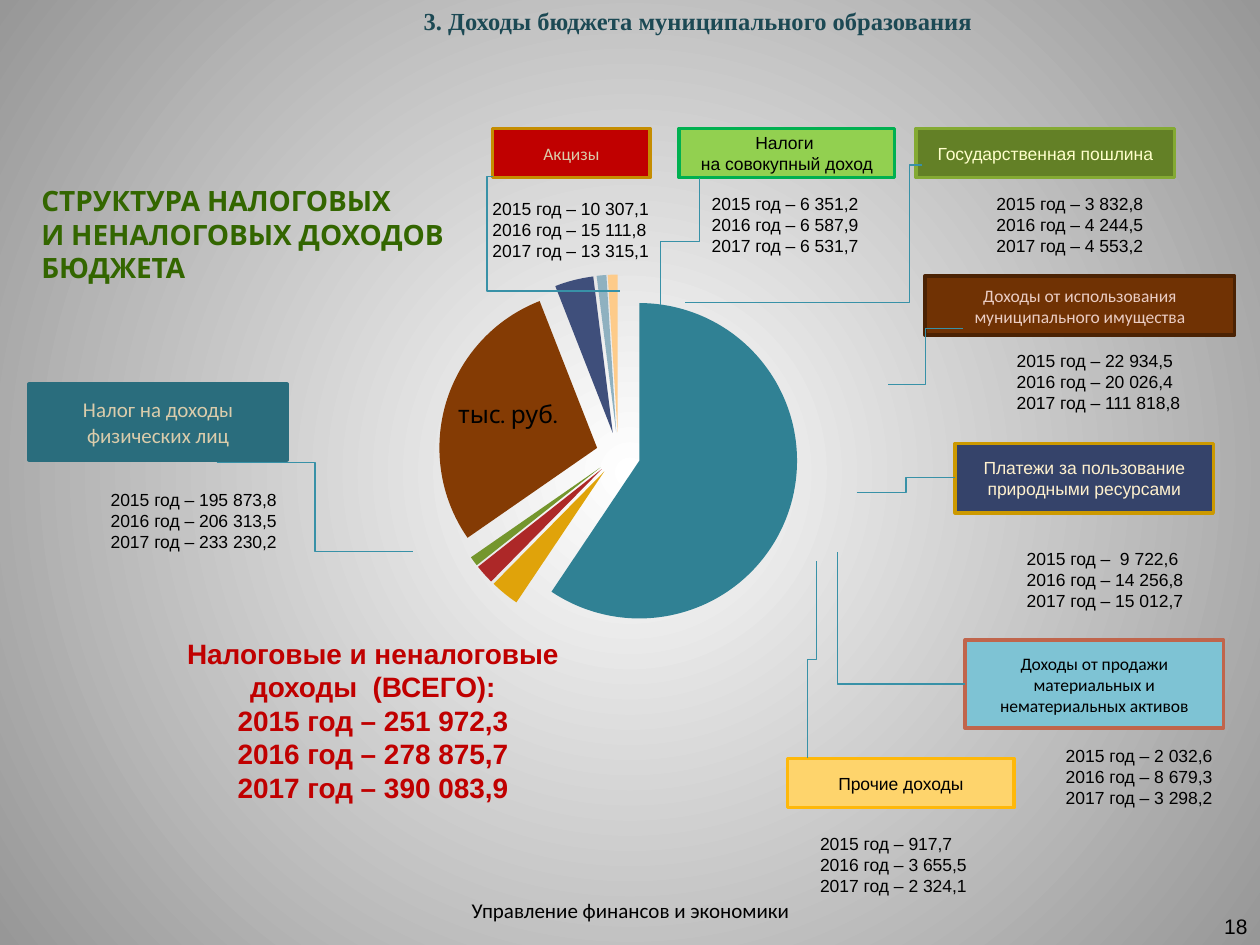
from lxml.etree import SubElement
from pptx import Presentation
from pptx.chart.data import CategoryChartData
from pptx.dml.color import RGBColor
from pptx.enum.chart import XL_CHART_TYPE
from pptx.enum.shapes import MSO_CONNECTOR, MSO_SHAPE
from pptx.enum.text import MSO_ANCHOR, MSO_AUTO_SIZE, PP_ALIGN
from pptx.oxml import parse_xml
from pptx.oxml.ns import nsdecls, qn
from pptx.util import Inches, Pt

THEME = {
    "center": "FFFFFF", "edge": "979797", "text": "000000", "title": "1C4954",
    "heading": "336600", "total": "C00000", "connector": "3891A7",
    "slices": ["308194", "E0A30A", "AD2828", "74962D", "843B04", "3F4F7B", "8FB1C0", "FDCB8A"],
    "small": 10, "normal": 12, "medium": 14, "large": 16,
}


def write(shape, text, size=THEME["small"], font="Arial", color=THEME["text"], bold=False,
          align=PP_ALIGN.LEFT, anchor=MSO_ANCHOR.TOP, wrap=True):
    """Fill a shape with text, one paragraph per line."""
    frame = shape.text_frame
    frame.word_wrap = wrap
    frame.auto_size = MSO_AUTO_SIZE.NONE
    frame.vertical_anchor = anchor
    frame.text = text
    for paragraph in frame.paragraphs:
        paragraph.alignment = align
        for run in paragraph.runs:
            run.font.size = Pt(size)
            run.font.name = font
            run.font.bold = bold
            run.font.color.rgb = RGBColor.from_string(color)


def inches(*lengths):
    return [Inches(length) for length in lengths]


presentation = Presentation()
presentation.slide_width, presentation.slide_height = inches(10, 7.5)
slide = presentation.slides.add_slide(presentation.slide_layouts[5])
shapes = slide.shapes

# Background: radial gradient from the middle
fill = slide.background.fill
fill.gradient()
for stop, position, color in zip(fill.gradient_stops, (0, 1), (THEME["center"], THEME["edge"])):
    stop.position = position
    stop.color.rgb = RGBColor.from_string(color)
linear = next(slide.background._cSld.iter(qn("a:lin")))
linear.getparent().replace(linear, parse_xml(
    f'<a:path {nsdecls("a")} path="circle">'
    '<a:fillToRect l="50000" t="50000" r="50000" b="50000"/></a:path>'))

# Title
title = shapes.title
title.left, title.top, title.width, title.height = inches(1.87, 0, 7.34, 0.34)
write(title, "3. Доходы бюджета муниципального образования", size=THEME["medium"],
      font="Times New Roman", color=THEME["title"], bold=True, align=PP_ALIGN.CENTER)

# Exploded pie of the income structure
chart_data = CategoryChartData()
chart_data.categories = [str(number) for number in range(1, 9)]
chart_data.add_series("Series 1", (60, 3, 2, 1, 29, 4, 1, 1))
chart = shapes.add_chart(XL_CHART_TYPE.PIE, *inches(2.43, 2.01, 4.95, 3.14), chart_data).chart
chart.has_legend = False
chart.has_title = False
chart.font.name = "Calibri"
chart.font.size = Pt(18)
chart.font.color.rgb = RGBColor.from_string(THEME["text"])
plot = chart.plots[0]
plot.vary_by_categories = True
series = plot.series[0]
for index, color in enumerate(THEME["slices"]):
    point_format = series.points[index].format
    point_format.fill.solid()
    point_format.fill.fore_color.rgb = RGBColor.from_string(color)
    point_format.line.fill.background()
series._element.find(qn("c:dPt")).addprevious(
    parse_xml(f'<c:explosion {nsdecls("c")} val="14"/>'))
plot_area = next(chart._chartSpace.iter(qn("c:plotArea")))
for layout in plot_area.findall(qn("c:layout")):
    plot_area.remove(layout)
plot_area.insert(0, parse_xml(
    f'<c:layout {nsdecls("c")}><c:manualLayout><c:layoutTarget val="inner"/>'
    '<c:xMode val="edge"/><c:yMode val="edge"/><c:x val="0.03"/><c:y val="0.054"/>'
    '<c:w val="0.941"/><c:h val="0.909"/></c:manualLayout></c:layout>'))

# Income sources: label, box, fill, line, text colour, font, size, figures box, 2015-2017 figures
sources = [
    ("Налог на доходы физических лиц", (0.23, 3.05, 2.05, 0.6), "2A6D7D", "2A6D7D", "DACCAB",
     "Calibri", THEME["normal"], (0.78, 3.83, 1.53), ("195 873,8", "206 313,5", "233 230,2")),
    ("Акцизы", (3.91, 1.02, 1.25, 0.39), "C00000", "C58D01", "DACCAB",
     "Calibri", THEME["small"], (3.81, 1.52, 1.45), ("10 307,1", "15 111,8", "13 315,1")),
    ("Налоги \nна совокупный доход", (5.39, 1.02, 1.71, 0.39), "92D050", "00B050", "000000",
     "Arial", THEME["small"], (5.55, 1.48, 1.38), ("6 351,2", "6 587,9", "6 531,7")),
    ("Государственная пошлина", (7.27, 1.02, 2.05, 0.39), "638026", "84AA33", "FFFFCC",
     "Arial", THEME["small"], (7.81, 1.48, 1.42), ("3 832,8", "4 244,5", "4 553,2")),
    ("Доходы от использования муниципального имущества", (7.34, 2.19, 2.46, 0.47),
     "703204", "4B2203", "EACCC3",
     "Calibri", THEME["small"], (7.97, 2.73, 1.53), ("22 934,5", "20 026,4", "111 818,8")),
    ("Платежи за пользование природными ресурсами", (7.58, 3.52, 2.05, 0.55),
     "35436A", "CC9900", "FFF1CE",
     "Arial", THEME["small"], (8.05, 4.3, 1.49), (" 9 722,6", "14 256,8", "15 012,7")),
    ("Доходы от продажи материальных и нематериальных активов", (7.66, 5.08, 2.05, 0.7),
     "7EC3D4", "C0654C", "000000",
     "Calibri", THEME["small"], (8.36, 5.86, 1.42), ("2 032,6", "8 679,3", "3 298,2")),
    ("Прочие доходы", (6.25, 6.02, 1.8, 0.39), "FED46C", "FEB80A", "000000",
     "Arial", THEME["small"], (6.41, 6.56, 1.38), ("917,7", "3 655,5", "2 324,1")),
]
for label, box, fill_color, line_color, text_color, font, size, place, figures in sources:
    shape = shapes.add_shape(MSO_SHAPE.RECTANGLE, *inches(*box))
    shape.shadow.inherit = False
    shape.fill.solid()
    shape.fill.fore_color.rgb = RGBColor.from_string(fill_color)
    shape.line.color.rgb = RGBColor.from_string(line_color)
    shape.line.width = Pt(2)
    write(shape, label, size=size, font=font, color=text_color,
          align=PP_ALIGN.CENTER, anchor=MSO_ANCHOR.MIDDLE)
    lines = [f"{year} год – {figure}" for year, figure in zip((2015, 2016, 2017), figures)]
    write(shapes.add_textbox(*inches(*place, 0.61)), "\n".join(lines), wrap=False)

# Heading, unit, total, footer and slide number
write(shapes.add_textbox(*inches(0.23, 1.41, 5.97, 1.21)),
      "СТРУКТУРА НАЛОГОВЫХ\nИ НЕНАЛОГОВЫХ ДОХОДОВ\nБЮДЖЕТА",
      size=THEME["large"], font="Karla", color=THEME["heading"], bold=True)
write(shapes.add_textbox(*inches(3.52, 3.12, 1.02, 0.34)), "тыс. руб.",
      size=THEME["medium"], font="Karla", align=PP_ALIGN.CENTER, wrap=False)
write(shapes.add_textbox(*inches(1.24, 5, 3.44, 1.45)),
      "Налоговые и неналоговые доходы  (ВСЕГО):\n2015 год – 251 972,3\n"
      "2016 год – 278 875,7\n2017 год – 390 083,9",
      size=THEME["large"], color=THEME["total"], bold=True, align=PP_ALIGN.CENTER)
write(shapes.add_textbox(*inches(3.42, 7.02, 3.17, 0.4)), "Управление финансов и экономики",
      size=THEME["normal"], font="Calibri", align=PP_ALIGN.CENTER, anchor=MSO_ANCHOR.MIDDLE)
write(shapes.add_textbox(*inches(7.67, 7.1, 2.33, 0.4)), "18",
      size=THEME["normal"], align=PP_ALIGN.RIGHT, anchor=MSO_ANCHOR.BOTTOM)

# Elbow connectors: start, end, bend in percent of the run, leaves vertically
connectors = [
    ((1.72, 3.67), (3.28, 4.38), 50, False),
    ((3.91, 1.4), (4.92, 2.31), -4.5, False),
    ((5.55, 1.41), (5.24, 2.42), 50, True),
    ((7.32, 1.31), (5.44, 2.4), 5.5, False),
    ((7.64, 2.61), (7.05, 3.05), 50, False),
    ((6.8, 3.91), (7.58, 3.79), 50, False),
    ((7.66, 5.43), (6.65, 4.38), 100, False),
    ((6.41, 6.02), (6.48, 4.45), 50, True),
]
for (x1, y1), (x2, y2), bend, vertical in connectors:
    if vertical:  # lay the line flat about its centre, then turn it by 90 degrees
        center_x, center_y = (x1 + x2) / 2, (y1 + y2) / 2
        half_x, half_y = (y2 - y1) / 2, (x1 - x2) / 2
        x1, y1 = center_x - half_x, center_y - half_y
        x2, y2 = center_x + half_x, center_y + half_y
    connector = shapes.add_connector(MSO_CONNECTOR.ELBOW, *inches(x1, y1, x2, y2))
    connector.line.color.rgb = RGBColor.from_string(THEME["connector"])
    connector.line.width = Pt(0.75)
    properties = connector._element.spPr
    if vertical:
        properties.find(qn("a:xfrm")).set("rot", "5400000")
    guides = next(properties.iter(qn("a:avLst")))
    SubElement(guides, qn("a:gd"), name="adj1", fmla=f"val {round(bend * 1000)}")
    SubElement(properties, qn("a:effectLst"))

presentation.save("out.pptx")
